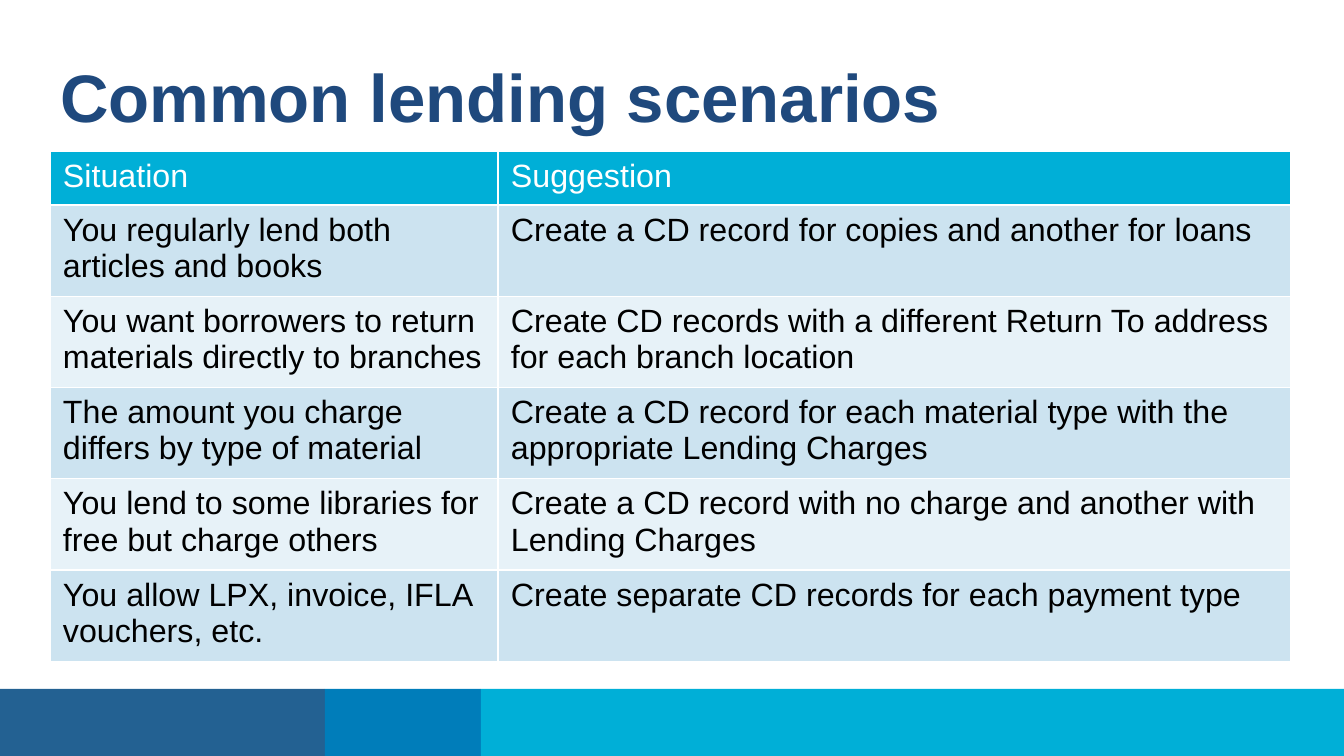
from lxml.etree import SubElement
from pptx import Presentation
from pptx.dml.color import RGBColor
from pptx.enum.shapes import MSO_SHAPE
from pptx.enum.text import MSO_ANCHOR
from pptx.oxml.ns import qn
from pptx.util import Pt

WHITE = RGBColor(0xFF, 0xFF, 0xFF)
BLACK = RGBColor(0x00, 0x00, 0x00)
NAVY = RGBColor(0x1F, 0x49, 0x7D)
STEEL = RGBColor(0x23, 0x61, 0x92)
BLUE = RGBColor(0x00, 0x7D, 0xBA)
CYAN = RGBColor(0x00, 0xAF, 0xD7)
BANDS = (RGBColor(0xE7, 0xF2, 0xF8), RGBColor(0xCC, 0xE3, 0xF0))

WIDTH, HEIGHT = 1344, 756
FOOT_TOP = 689
FOOT = ((0, 325, STEEL), (325, 481, BLUE), (481, WIDTH, CYAN))
COLS = (448, 793)
HEAD_ROW, BODY_ROW = 54, 90
ROWS = (
    ("Situation", "Suggestion"),
    ("You regularly lend both articles and books",
     "Create a CD record for copies and another for loans"),
    ("You want borrowers to return materials directly to branches",
     "Create CD records with a different Return To address for each branch location"),
    ("The amount you charge differs by type of material",
     "Create a CD record for each material type with the appropriate Lending Charges"),
    ("You lend to some libraries for free but charge others",
     "Create a CD record with no charge and another with Lending Charges"),
    ("You allow LPX, invoice, IFLA vouchers, etc.",
     "Create separate CD records for each payment type"),
)


def px(count):
    """Turn pixels into EMU at 100.8 pixels to the inch."""
    return round(count * 914400 / 100.8)


def style(frame, size, color, bold=False):
    for run in frame.paragraphs[0].runs:
        font = run.font
        font.name = "Arial"
        font.size = Pt(size)
        font.bold = bold
        font.color.rgb = color


def add_title(slide, text):
    box = slide.shapes.add_textbox(px(50), px(50), px(1241), px(101))
    frame = box.text_frame
    frame.word_wrap = True
    frame.vertical_anchor = MSO_ANCHOR.MIDDLE
    frame.margin_left = px(10)
    frame.margin_top, frame.margin_bottom = px(5), px(15)
    frame.text = text
    style(frame, 48, NAVY, bold=True)


def add_bar(slide, left, right, color):
    bar = slide.shapes.add_shape(MSO_SHAPE.RECTANGLE, px(left), px(FOOT_TOP),
                                 px(right - left), px(HEIGHT - FOOT_TOP))
    bar.shadow.inherit = False
    bar.fill.solid()
    bar.fill.fore_color.rgb = color
    bar.line.fill.background()


def add_edges(cell):
    """Rule all four sides of a cell in white."""
    props = cell._tc.get_or_add_tcPr()
    for side in ("a:lnL", "a:lnR", "a:lnT", "a:lnB"):
        line = SubElement(props, qn(side), w=str(Pt(1)))
        fill = SubElement(line, qn("a:solidFill"))
        SubElement(fill, qn("a:srgbClr"), val=str(WHITE))


def fill_cell(cell, text, color, ink):
    cell.margin_left = cell.margin_right = px(13)
    cell.margin_top = cell.margin_bottom = px(7)
    add_edges(cell)
    cell.fill.solid()
    cell.fill.fore_color.rgb = color
    cell.text_frame.text = text
    style(cell.text_frame, 23, ink)


def add_grid(slide):
    high = HEAD_ROW + BODY_ROW * (len(ROWS) - 1)
    table = slide.shapes.add_table(len(ROWS), len(COLS), px(50), px(151),
                                   px(sum(COLS)), px(high)).table
    for col, wide in zip(table.columns, COLS):
        col.width = px(wide)
    for i, texts in enumerate(ROWS):
        table.rows[i].height = px(BODY_ROW if i else HEAD_ROW)
        color, ink = (BANDS[i % 2], BLACK) if i else (CYAN, WHITE)
        for j, text in enumerate(texts):
            fill_cell(table.cell(i, j), text, color, ink)


def main():
    deck = Presentation()
    deck.slide_width, deck.slide_height = px(WIDTH), px(HEIGHT)
    slide = deck.slides.add_slide(deck.slide_layouts[6])
    for left, right, color in FOOT:
        add_bar(slide, left, right, color)
    add_title(slide, "Common lending scenarios")
    add_grid(slide)
    deck.save("out.pptx")


if __name__ == "__main__":
    main()
